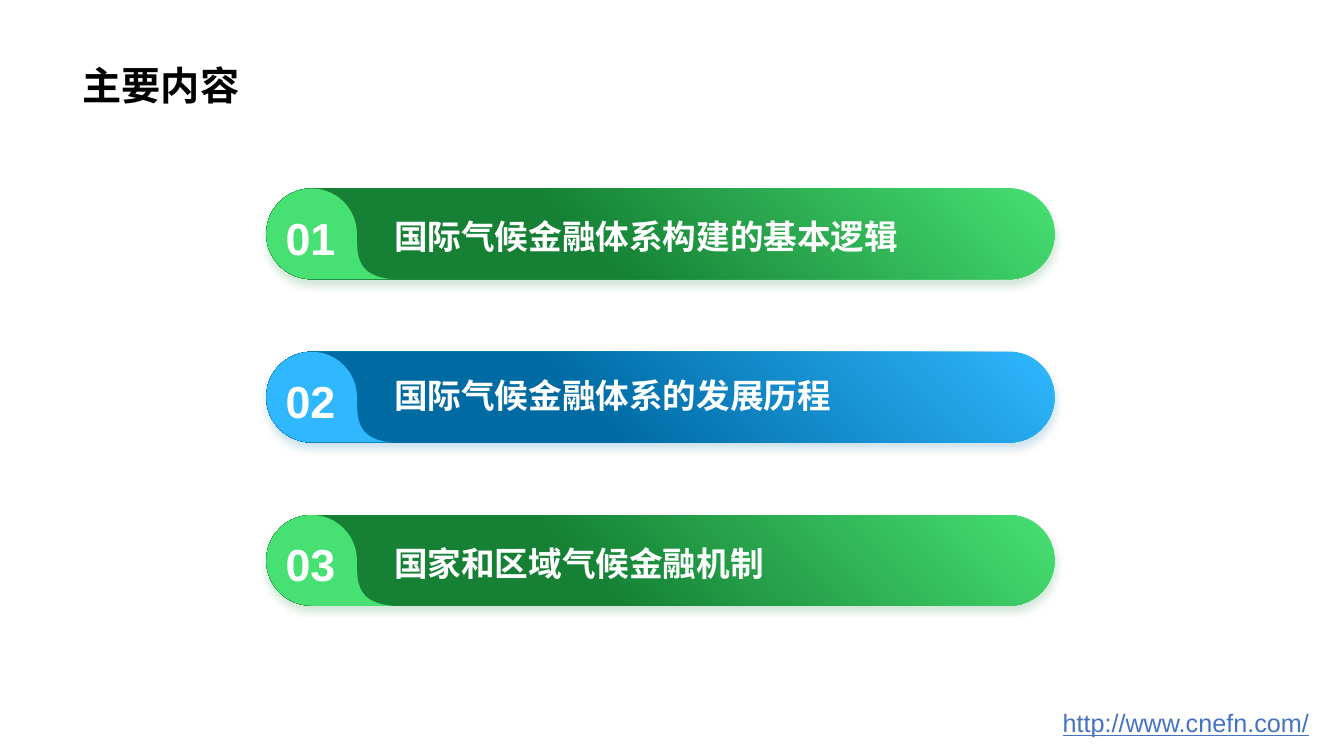
import math

import lxml.etree
import pptx
import pptx.dml.color
import pptx.enum.shapes
import pptx.enum.text
import pptx.oxml.ns
import pptx.util

RGBColor = pptx.dml.color.RGBColor
Inches = pptx.util.Inches
Pt = pptx.util.Pt
Align = pptx.enum.text.PP_ALIGN
Anchor = pptx.enum.text.MSO_ANCHOR

BLACK = RGBColor(0x00, 0x00, 0x00)
WHITE = RGBColor(0xFF, 0xFF, 0xFF)
LINK_BLUE = RGBColor(0x44, 0x72, 0xC4)
LIGHT_GREEN = RGBColor(0x47, 0xE0, 0x73)
DARK_GREEN = RGBColor(0x16, 0x81, 0x35)
LIGHT_BLUE = RGBColor(0x2F, 0xB7, 0xFF)
DARK_BLUE = RGBColor(0x00, 0x6B, 0xA3)

BAR_LEFT, BAR_TOP = 2.64, 1.87
BAR_WIDTH, BAR_HEIGHT = 7.82, 0.9
BAR_PITCH = 1.62

CHAPTERS = [
    ("01", "国际气候金融体系构建的基本逻辑", LIGHT_GREEN, DARK_GREEN, 0.22),
    ("02", "国际气候金融体系的发展历程", LIGHT_BLUE, DARK_BLUE, 0.18),
    ("03", "国家和区域气候金融机制", LIGHT_GREEN, DARK_GREEN, 0.23),
]


def format_text(frame, text, size, color, bold=False, align=Align.LEFT):
    frame.text = text
    para = frame.paragraphs[0]
    para.alignment = align
    para.font.name = "Arial"
    para.font.size = Pt(size)
    para.font.bold = bold
    para.font.color.rgb = color
    return para


def add_text(page, area, text, size, color, wrap=True, **style):
    box = page.shapes.add_textbox(*map(Inches, area))
    box.text_frame.word_wrap = wrap
    return format_text(box.text_frame, text, size, color, **style)


def add_title(page, text):
    title = page.shapes.title
    title.left, title.top = Inches(0.72), 0
    title.width, title.height = Inches(11.88), Inches(1.13)
    title.text_frame.vertical_anchor = Anchor.BOTTOM
    format_text(title.text_frame, text, 28, BLACK, bold=True)


def add_soft_shadow(shape, color):
    shape.shadow.inherit = False
    qn = pptx.oxml.ns.qn
    effects = shape._element.spPr.find(qn("a:effectLst"))
    shadow = lxml.etree.SubElement(
        effects, qn("a:outerShdw"), blurRad=str(Pt(6)), dist=str(Pt(4)),
        dir="5400000", algn="t", rotWithShape="0")
    tint = lxml.etree.SubElement(shadow, qn("a:srgbClr"), val=str(color))
    lxml.etree.SubElement(tint, qn("a:alpha"), val="20000")


def add_bar(page, top, light, dark):
    bar = page.shapes.add_shape(
        pptx.enum.shapes.MSO_SHAPE.ROUNDED_RECTANGLE,
        *map(Inches, (BAR_LEFT, top, BAR_WIDTH, BAR_HEIGHT)))
    bar.adjustments[0] = 0.5
    bar.line.fill.background()
    bar.fill.gradient()
    bar.fill.gradient_angle = 225
    for stop, color, position in zip(bar.fill.gradient_stops, (light, dark), (0, 0.6)):
        stop.color.rgb = color
        stop.position = position
    add_soft_shadow(bar, dark)


def bezier(points, steps=24):
    for step in range(1, steps + 1):
        t = step / steps
        weights = ((1 - t) ** 3, 3 * t * (1 - t) ** 2, 3 * t * t * (1 - t), t ** 3)
        yield tuple(sum(w * p[axis] for w, p in zip(weights, points)) for axis in (0, 1))


def add_number_tab(page, top, color):
    radius = BAR_HEIGHT / 2
    center_x, center_y = BAR_LEFT + radius, top + radius
    bottom = top + BAR_HEIGHT
    arc = [(center_x + radius * math.cos(math.radians(angle)),
            center_y + radius * math.sin(math.radians(angle)))
           for angle in range(90, 361, 5)]
    edge = arc[-1]
    tail = bezier([edge, (edge[0], center_y + 0.22),
                   (edge[0], bottom - 0.03), (edge[0] + 0.35, bottom)])
    outline = [(Inches(x), Inches(y)) for x, y in [*arc, *tail]]
    builder = page.shapes.build_freeform(*outline[0])
    builder.add_line_segments(outline[1:], close=True)
    tab = builder.convert_to_shape()
    tab.shadow.inherit = False
    tab.fill.solid()
    tab.fill.fore_color.rgb = color
    tab.line.fill.background()


def add_chapter(page, row, number, name, light, dark, name_offset):
    top = BAR_TOP + row * BAR_PITCH
    add_bar(page, top, light, dark)
    add_number_tab(page, top, light)
    add_text(page, (BAR_LEFT + 1.17, top + name_offset, 5.77, 0.5),
             name, 24, WHITE, bold=True)
    add_text(page, (BAR_LEFT + 0.09, top + 0.17, 0.7, 0.64),
             number, 32, WHITE, wrap=False, bold=True, align=Align.CENTER)


def main():
    deck = pptx.Presentation()
    deck.slide_width, deck.slide_height = Inches(13.33), Inches(7.5)
    page = deck.slides.add_slide(deck.slide_layouts[5])
    add_title(page, "主要内容")
    for row, chapter in enumerate(CHAPTERS):
        add_chapter(page, row, *chapter)
    address = add_text(page, (10.44, 6.97, 2.74, 0.4), "http://www.cnefn.com/", 18, LINK_BLUE)
    address.font.underline = True
    deck.save("out.pptx")


if __name__ == "__main__":
    main()
